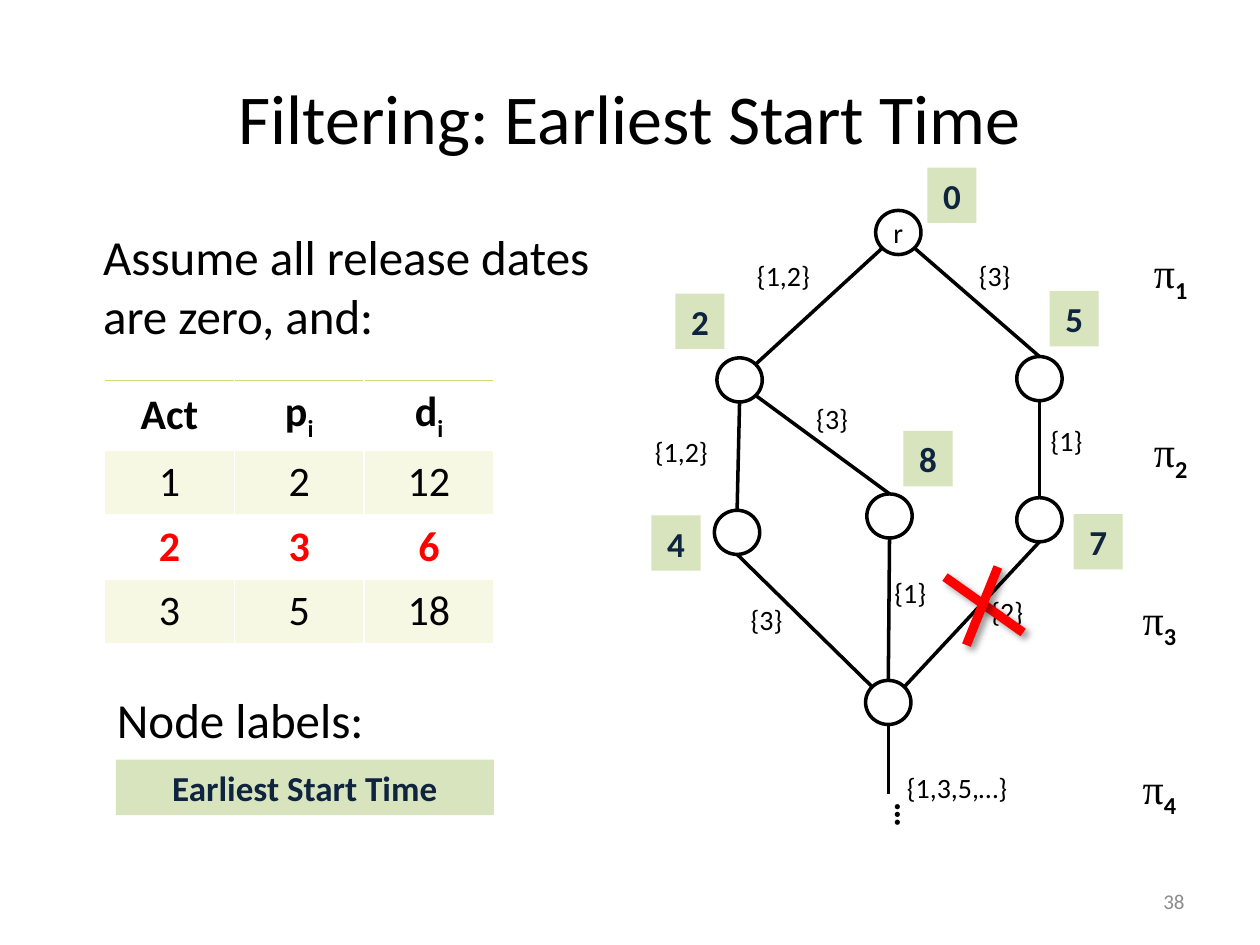
from lxml.etree import SubElement
from pptx import Presentation
from pptx.dml.color import RGBColor
from pptx.enum.shapes import MSO_CONNECTOR as Connector, MSO_SHAPE as Shape
from pptx.enum.text import MSO_ANCHOR as Anchor, PP_ALIGN as Align
from pptx.oxml import parse_xml
from pptx.oxml.ns import nsdecls, qn
from pptx.util import Inches, Pt

BLACK = RGBColor(0x00, 0x00, 0x00)
WHITE = RGBColor(0xFF, 0xFF, 0xFF)
RED = RGBColor(0xFF, 0x00, 0x00)
GRAY = RGBColor(0x8C, 0x8C, 0x8C)
NAVY = RGBColor(0x0F, 0x24, 0x3E)
GREEN = RGBColor(0xD7, 0xE4, 0xBD)
LIME = RGBColor(0xD2, 0xDA, 0x7A)
PALE_LIME = RGBColor(0xF6, 0xF8, 0xE4)

NODE_SIZE = (0.36, 0.35)
SITES = {"top": (0.5, 0), "bottom": (0.5, 1),
         "top_left": (0.15, 0.15), "top_right": (0.85, 0.15),
         "bottom_left": (0.15, 0.85), "bottom_right": (0.85, 0.85)}
NODES = {"root": (1.95, 0.67), "left": (0.69, 1.84), "right": (3.07, 1.83),
         "low_left": (0.67, 3.05), "middle": (1.88, 2.92),
         "low_right": (3.07, 2.95), "merge": (1.87, 4.4)}
EDGES = [("root", "bottom_left", "left", "top_right"),
         ("root", "bottom_right", "right", "top"),
         ("left", "bottom", "low_left", "top"),
         ("left", "bottom_right", "middle", "top"),
         ("right", "bottom", "low_right", "top"),
         ("low_left", "bottom", "merge", "top_left"),
         ("middle", "bottom", "merge", "top"),
         ("low_right", "bottom", "merge", "top_right")]
EDGE_LABELS = [("{1,2}", 0.91, 1), ("{3}", 2.67, 1), ("{1,2}", 0.1, 2.4),
               ("{3}", 1.38, 2.14), ("{1}", 3.24, 2.31), ("{3}", 0.86, 3.73),
               ("{1}", 2, 3.52), ("{2}", 2.77, 3.67), ("{1,3,5,…}", 2.1, 5.07)]
START_TIMES = [("0", 2.36, 0.33), ("2", 0.36, 1.33), ("5", 3.33, 1.31),
               ("7", 3.52, 3.08), ("4", 0.17, 3.09), ("8", 2.17, 2.42)]
LAYERS = [("1", 4.06, 0.91), ("2", 4.06, 2.33), ("3", 3.97, 3.66), ("4", 3.97, 5)]
JOBS = [("1", "2", "12"), ("2", "3", "6"), ("3", "5", "18")]
LATE_JOB = "2"


def set_font(font, size, color=BLACK, bold=False, name="Calibri"):
    """Set the face, size, colour and weight of a font."""
    font.name, font.size, font.bold = name, Pt(size), bold
    font.color.rgb = color


def add_subscript(paragraph, text):
    """Append a subscript run and return it."""
    run = paragraph.add_run()
    run.text = text
    run._r.get_or_add_rPr().set("baseline", "-25000")
    return run


def add_text(slide, text, left, top, width, height, size, color=BLACK, bold=False,
             align=Align.LEFT, anchor=Anchor.TOP):
    """Add a wrapped text box in one font."""
    box = slide.shapes.add_textbox(Inches(left), Inches(top), Inches(width), Inches(height))
    frame = box.text_frame
    frame.word_wrap, frame.vertical_anchor = True, anchor
    paragraph = frame.paragraphs[0]
    paragraph.text, paragraph.alignment = text, align
    set_font(paragraph.font, size, color, bold)
    return box


def add_line(slide, start, end, width=2, color=BLACK, shadow=False):
    """Add a straight line, with a soft drop shadow if wanted."""
    line = slide.shapes.add_connector(Connector.STRAIGHT, *map(Inches, start + end))
    line.line.width, line.line.color.rgb = Pt(width), color
    effects = SubElement(line._element.spPr, qn("a:effectLst"))
    if shadow:
        effects.append(parse_xml(
            f'<a:outerShdw {nsdecls("a")} blurRad="50800" dist="38100" dir="2700000">'
            '<a:srgbClr val="000000"><a:alpha val="40000"/></a:srgbClr></a:outerShdw>'))


def add_badge(slide, text, left, top, width=0.39):
    """Add a green label with bold navy text."""
    badge = slide.shapes.add_shape(Shape.RECTANGLE, Inches(left), Inches(top),
                                   Inches(width), Inches(0.44))
    badge.shadow.inherit = False
    badge.fill.solid()
    badge.fill.fore_color.rgb = GREEN
    badge.line.fill.background()
    paragraph = badge.text_frame.paragraphs[0]
    paragraph.text, paragraph.alignment = text, Align.CENTER
    set_font(paragraph.font, 20, NAVY, True)


def add_node(slide, text, left, top):
    """Add a round graph node."""
    node = slide.shapes.add_shape(Shape.OVAL, Inches(left), Inches(top),
                                  *map(Inches, NODE_SIZE))
    node.shadow.inherit = False
    node.fill.solid()
    node.fill.fore_color.rgb = WHITE
    node.line.color.rgb, node.line.width = BLACK, Pt(2)
    if text:
        frame = node.text_frame
        frame.margin_left = frame.margin_right = frame.margin_top = frame.margin_bottom = 0
        frame.paragraphs[0].text = text
        frame.paragraphs[0].alignment = Align.CENTER
        set_font(frame.paragraphs[0].font, 16)


def add_rule(cell, side):
    """Draw a lime rule on one side of a table cell."""
    cell._tc.get_or_add_tcPr().append(parse_xml(
        f'<a:{side} {nsdecls("a")} w="12700"><a:solidFill>'
        f'<a:srgbClr val="{LIME}"/></a:solidFill></a:{side}>'))


def add_jobs(slide, left, top, width):
    """Add the table of processing times and due dates."""
    table = slide.shapes.add_table(4, 3, Inches(left), Inches(top),
                                   Inches(width), Inches(2.08)).table
    table.first_row = table.horz_banding = False
    for row_index, values in enumerate([("Act", "p", "d")] + JOBS):
        header = row_index == 0
        late = not header and values[0] == LATE_JOB
        table.rows[row_index].height = Inches(0.55 if header else 0.51)
        for column, value in enumerate(values):
            cell = table.cell(row_index, column)
            cell.vertical_anchor = Anchor.MIDDLE
            paragraph = cell.text_frame.paragraphs[0]
            paragraph.text, paragraph.alignment = value, Align.CENTER
            if header:
                add_rule(cell, "lnT")
                add_rule(cell, "lnB")
                if column:
                    add_subscript(paragraph, "i")
            set_font(paragraph.font, 24, RED if late else BLACK, header or late)
            if row_index % 2:
                cell.fill.solid()
                cell.fill.fore_color.rgb = PALE_LIME
            else:
                cell.fill.background()


def add_diagram(slide, left, top):
    """Add the decision diagram with its labels and the removed arc."""
    def place(x, y):
        """Move a point into the diagram's box."""
        return left + x, top + y

    def site(node, side):
        """Find a point on a node's rim."""
        (x, y), (across, down) = NODES[node], SITES[side]
        return place(x + across * NODE_SIZE[0], y + down * NODE_SIZE[1])

    for parent, leaving, child, entering in EDGES:
        add_line(slide, site(parent, leaving), site(child, entering))
    tail_x, tail_y = site("merge", "bottom")
    add_line(slide, (tail_x, tail_y), (tail_x, tail_y + 0.55), 1.5)
    for node, point in NODES.items():
        add_node(slide, "r" if node == "root" else "", *place(*point))
    for text, x, y in EDGE_LABELS:
        add_text(slide, text, *place(x, y), 1.1, 0.37, 16)
    dots = add_text(slide, "…", *place(1.94, 5.27), 0.55, 0.4, 20, bold=True,
                    align=Align.CENTER, anchor=Anchor.MIDDLE)
    dots.rotation = 90
    for index, x, y in LAYERS:
        layer = add_text(slide, "π", *place(x, y), 0.6, 0.5, 24)
        paragraph = layer.text_frame.paragraphs[0]
        set_font(paragraph.runs[0].font, 24, name="Times New Roman")
        set_font(add_subscript(paragraph, index).font, 24, bold=True)
    for text, x, y in START_TIMES:
        add_badge(slide, text, *place(x, y))
    for start, end in [((2.5, 3.58), (3.12, 4.02)), ((2.92, 3.5), (2.67, 4.12))]:
        add_line(slide, place(*start), place(*end), 5.25, RED, shadow=True)


def add_legend(slide, left, top):
    """Add the key to the node labels."""
    add_text(slide, "Node labels:", left, top, 2.3, 0.57, 28)
    add_badge(slide, "Earliest Start Time", left + 0.09, top + 0.61, 3)


def main():
    """Build and save the slide."""
    deck = Presentation()
    deck.slide_width, deck.slide_height = Inches(10), Inches(7.5)
    slide = deck.slides.add_slide(deck.slide_layouts[6])
    add_text(slide, "Filtering: Earliest Start Time", 0.5, 0.3, 9, 1.25, 40,
             align=Align.CENTER, anchor=Anchor.MIDDLE)
    add_text(slide, "Assume all release dates are zero, and:", 0.72, 1.75, 4.33, 1.1, 28)
    add_jobs(slide, 0.83, 3.02, 3.09)
    add_legend(slide, 0.83, 5.42)
    add_diagram(slide, 5, 1)
    add_text(slide, "38", 7.17, 6.95, 2.33, 0.4, 12, GRAY,
             align=Align.RIGHT, anchor=Anchor.MIDDLE)
    deck.save("out.pptx")


if __name__ == "__main__":
    main()
